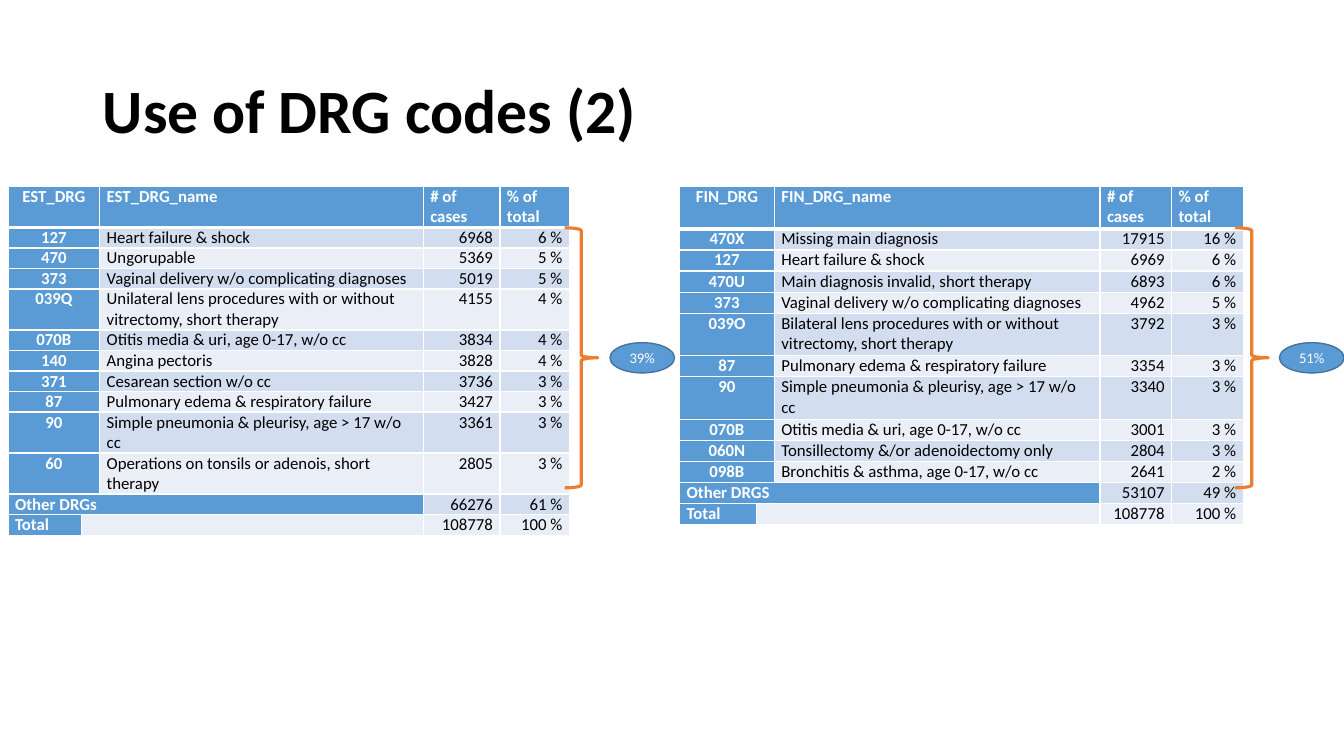
import pptx
import pptx.dml.color
import pptx.enum.shapes
import pptx.enum.text
import pptx.oxml.ns
import pptx.util
from lxml import etree

Inches = pptx.util.Inches
Pt = pptx.util.Pt
ALIGN = pptx.enum.text.PP_ALIGN
SHAPE = pptx.enum.shapes.MSO_SHAPE
qn = pptx.oxml.ns.qn

FONT = "Calibri"
COLORS = {
    "white": "FFFFFF",
    "black": "000000",
    "blue": "5B9BD5",
    "dark_blue": "43739E",
    "odd_row": "D2DEEF",
    "even_row": "EAEFF7",
    "orange": "ED7D31",
}

# Each DRG row: code, name, number of cases, percentage of total
panels = [
    {
        "prefix": "EST", "left": 0.08, "columns": [0.73, 0.16, 3.21, 0.76, 0.69],
        "line_height": 0.2, "tall_rows": [],
        "brace_left": 5.6, "share_left": 6.05, "share": "39%",
        "drgs": [
            ("127", "Heart failure & shock", "6968", "6 %"),
            ("470", "Ungorupable", "5369", "5 %"),
            ("373", "Vaginal delivery w/o complicating diagnoses", "5019", "5 %"),
            ("039Q", "Unilateral lens procedures with or without vitrectomy, short therapy", "4155", "4 %"),
            ("070B", "Otitis media & uri, age 0-17, w/o cc", "3834", "4 %"),
            ("140", "Angina pectoris", "3828", "4 %"),
            ("371", "Cesarean section w/o cc", "3736", "3 %"),
            ("87", "Pulmonary edema & respiratory failure", "3427", "3 %"),
            ("90", "Simple pneumonia & pleurisy, age > 17 w/o cc", "3361", "3 %"),
            ("60", "Operations on tonsils or adenois, short therapy", "2805", "3 %"),
        ],
        "other": ("Other DRGs", "66276", "61 %"),
    },
    {
        "prefix": "FIN", "left": 6.74, "columns": [0.76, 0.18, 3.23, 0.71, 0.71],
        "line_height": 0.21, "tall_rows": [0, 5, 7],
        "brace_left": 12.25, "share_left": 12.69, "share": "51%",
        "drgs": [
            ("470X", "Missing main diagnosis", "17915", "16 %"),
            ("127", "Heart failure & shock", "6969", "6 %"),
            ("470U", "Main diagnosis invalid, short therapy", "6893", "6 %"),
            ("373", "Vaginal delivery w/o complicating diagnoses", "4962", "5 %"),
            ("039O", "Bilateral lens procedures with or without vitrectomy, short therapy", "3792", "3 %"),
            ("87", "Pulmonary edema & respiratory failure", "3354", "3 %"),
            ("90", "Simple pneumonia & pleurisy, age > 17 w/o cc", "3340", "3 %"),
            ("070B", "Otitis media & uri, age 0-17, w/o cc", "3001", "3 %"),
            ("060N", "Tonsillectomy &/or adenoidectomy only", "2804", "3 %"),
            ("098B", "Bronchitis & asthma, age 0-17, w/o cc", "2641", "2 %"),
        ],
        "other": ("Other DRGS", "53107", "49 %"),
    },
]


def rgb(name):
    return pptx.dml.color.RGBColor.from_string(COLORS[name])


def add_text(paragraph, text, size, color, bold=False):
    run = paragraph.add_run()
    run.text = text
    run.font.name = FONT
    run.font.size = Pt(size)
    run.font.bold = bold
    run.font.color.rgb = rgb(color)


presentation = pptx.Presentation()
presentation.slide_width = Inches(13.33)
presentation.slide_height = Inches(7.5)
slide = presentation.slides.add_slide(presentation.slide_layouts[5])

title = slide.shapes.title
title.left, title.top = Inches(0.92), Inches(0.4)
title.width, title.height = Inches(11.5), Inches(1.45)
title.text_frame.vertical_anchor = pptx.enum.text.MSO_ANCHOR.MIDDLE
title_paragraph = title.text_frame.paragraphs[0]
title_paragraph.alignment = ALIGN.LEFT
title_paragraph.line_spacing = 0.9
add_text(title_paragraph, "Use of DRG codes (2)", 44, "black", True)

for panel in panels:
    prefix = panel["prefix"]
    header = (f"{prefix}_DRG", "", f"{prefix}_DRG_name", "# of cases", "% of total")
    drg_rows = [(code, "", name, cases, percent) for code, name, cases, percent in panel["drgs"]]
    other_label, other_cases, other_percent = panel["other"]
    rows = [
        header,
        *drg_rows,
        (other_label, "", "", other_cases, other_percent),
        ("Total", "", "", "108778", "100 %"),
    ]
    other_row, total_row = len(rows) - 2, len(rows) - 1

    heights = [panel["line_height"] * (2 if row in panel["tall_rows"] else 1)
               for row in range(len(rows))]
    table = slide.shapes.add_table(
        len(rows), len(header), Inches(panel["left"]), Inches(1.85),
        Inches(sum(panel["columns"])), Inches(sum(heights))).table
    for column, width in zip(table.columns, panel["columns"]):
        column.width = Inches(width)
    for table_row, height in zip(table.rows, heights):
        table_row.height = Inches(height)

    for row, values in enumerate(rows):
        for column, value in enumerate(values):
            cell = table.cell(row, column)
            cell.margin_left = cell.margin_right = Inches(0.07)
            cell.margin_top = cell.margin_bottom = 0
            properties = cell._tc.get_or_add_tcPr()
            for side in ("lnL", "lnR", "lnT", "lnB"):
                thick = (row == 0 and side == "lnB") or (row == 1 and side == "lnT")
                border = etree.SubElement(properties, qn(f"a:{side}"), w=str(Pt(3 if thick else 1)))
                border_fill = etree.SubElement(border, qn("a:solidFill"))
                etree.SubElement(border_fill, qn("a:srgbClr"), val=COLORS["white"])

            is_label = row == 0 or column == 0
            band = "odd_row" if row % 2 else "even_row"
            cell.fill.solid()
            cell.fill.fore_color.rgb = rgb("blue" if is_label else band)

            paragraph = cell.text_frame.paragraphs[0]
            if column == 0 and row < other_row:
                paragraph.alignment = ALIGN.CENTER
            elif column > 2 and row > 0:
                paragraph.alignment = ALIGN.RIGHT
            if value:
                add_text(paragraph, value, 12, "white" if is_label else "black", is_label)
            else:
                etree.SubElement(paragraph._p, qn("a:endParaRPr"), sz="1200")

    for row in range(other_row):
        table.cell(row, 0).merge(table.cell(row, 1))
    table.cell(other_row, 0).merge(table.cell(other_row, 2))
    table.cell(total_row, 1).merge(table.cell(total_row, 2))

for panel in panels:
    group = slide.shapes.add_group_shape()
    brace = group.shapes.add_shape(
        SHAPE.RIGHT_BRACE, Inches(panel["brace_left"]), Inches(2.26), Inches(0.33), Inches(2.58))
    brace.shadow.inherit = False
    brace.fill.background()
    brace.line.color.rgb = rgb("orange")
    brace.line.width = Pt(2.25)

    share = group.shapes.add_shape(
        SHAPE.OVAL, Inches(panel["share_left"]), Inches(3.4), Inches(0.64), Inches(0.3))
    share.shadow.inherit = False
    share.fill.solid()
    share.fill.fore_color.rgb = rgb("blue")
    share.line.color.rgb = rgb("dark_blue")
    share.line.width = Pt(1)
    frame = share.text_frame
    frame.margin_left = frame.margin_right = frame.margin_top = frame.margin_bottom = 0
    frame.vertical_anchor = pptx.enum.text.MSO_ANCHOR.MIDDLE
    frame.paragraphs[0].alignment = ALIGN.CENTER
    add_text(frame.paragraphs[0], panel["share"], 10.5, "white")

presentation.save("out.pptx")
